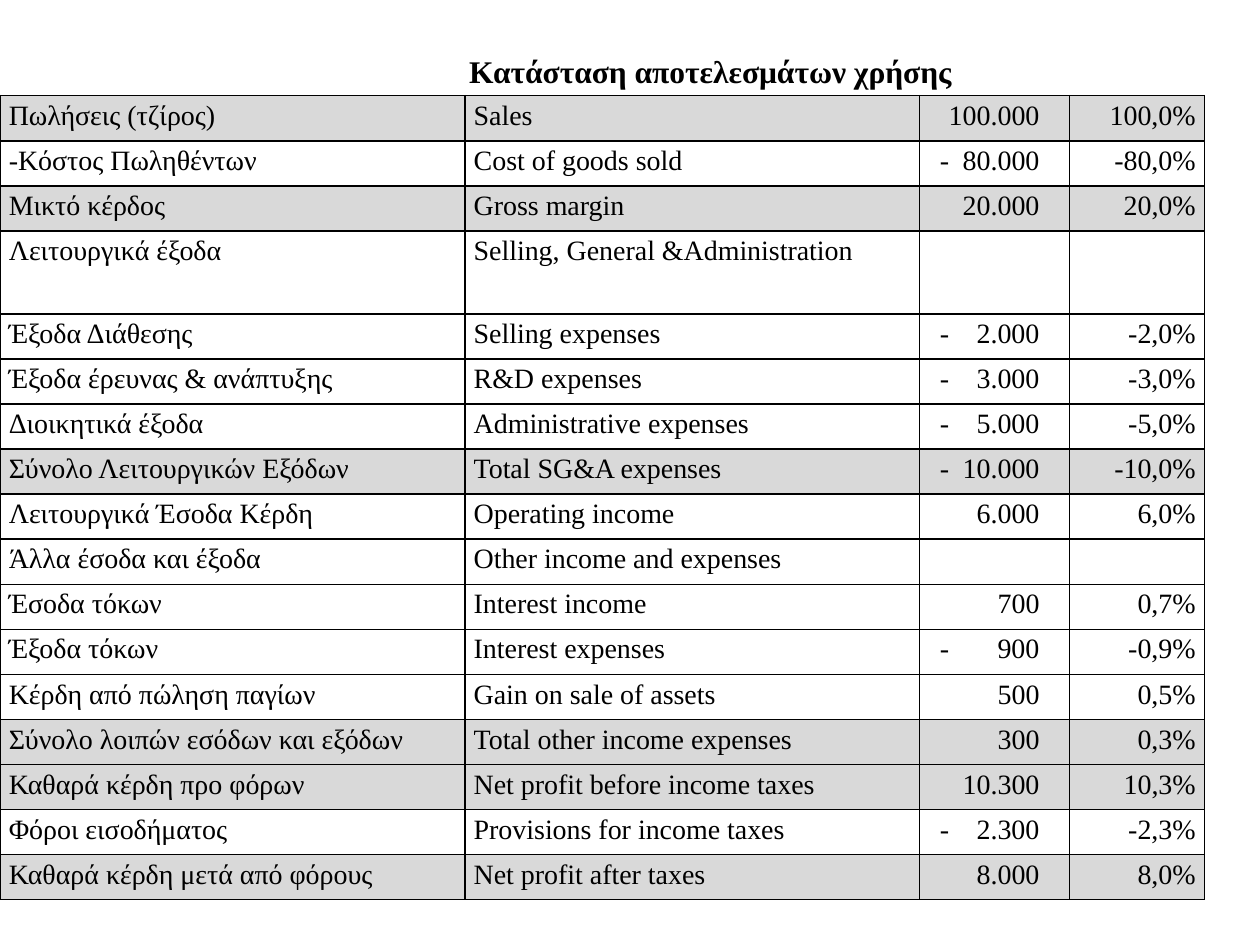
import pptx
import pptx.util
import pptx.dml.color
import pptx.enum.text
import pptx.oxml
import pptx.oxml.ns

Inches = pptx.util.Inches
Pt = pptx.util.Pt
Align = pptx.enum.text.PP_ALIGN

FONT = "Times New Roman"
COLORS = {"ink": "000000", "total": "D9D9D9"}
TITLE = "Κατάσταση αποτελεσμάτων χρήσης"
STATEMENT = [
    ("Πωλήσεις (τζίρος)", "Sales", "100.000", "100,0%"),
    ("-Κόστος Πωληθέντων", "Cost of goods sold", "-80.000", "-80,0%"),
    ("Μικτό κέρδος", "Gross margin", "20.000", "20,0%"),
    ("Λειτουργικά έξοδα", "Selling, General &Administration", "", ""),
    ("Έξοδα Διάθεσης", "Selling expenses", "-2.000", "-2,0%"),
    ("Έξοδα έρευνας & ανάπτυξης", "R&D expenses", "-3.000", "-3,0%"),
    ("Διοικητικά έξοδα", "Administrative expenses", "-5.000", "-5,0%"),
    ("Σύνολο Λειτουργικών Εξόδων", "Total SG&A expenses", "-10.000", "-10,0%"),
    ("Λειτουργικά Έσοδα Κέρδη", "Operating income", "6.000", "6,0%"),
    ("Άλλα έσοδα και έξοδα", "Other income and expenses", "", ""),
    ("Έσοδα τόκων", "Interest income", "700", "0,7%"),
    ("Έξοδα τόκων", "Interest expenses", "-900", "-0,9%"),
    ("Κέρδη από πώληση παγίων", "Gain on sale of assets", "500", "0,5%"),
    ("Σύνολο λοιπών εσόδων και εξόδων", "Total other income expenses", "300", "0,3%"),
    ("Καθαρά κέρδη προ φόρων", "Net profit before income taxes", "10.300", "10,3%"),
    ("Φόροι εισοδήματος", "Provisions for income taxes", "-2.300", "-2,3%"),
    ("Καθαρά κέρδη μετά από φόρους", "Net profit after taxes", "8.000", "8,0%"),
]
SHADED_ROWS = {0, 2, 7, 13, 14, 16}
TALL_ROW = 3
TALL_HEIGHT = 0.66
TABLE_HEIGHT = 6.38
COLUMN_WIDTHS = [3.69, 3.61, 1.19, 1.07]
AMOUNT_COLUMN = 2
PADDING = 0.07
SIGN_INSET = 0.16
AMOUNT_INSET = 0.24


def set_font(para, size, bold=False):
    para.font.name = FONT
    para.font.size = Pt(size)
    para.font.bold = bold
    para.font.color.rgb = pptx.dml.color.RGBColor.from_string(COLORS["ink"])


def add_borders(cell):
    properties = cell._tc.get_or_add_tcPr()
    for side in ("lnL", "lnR", "lnT", "lnB"):
        properties.append(pptx.oxml.parse_xml(
            f'<a:{side} {pptx.oxml.ns.nsdecls("a")} w="{Pt(1)}"><a:solidFill>'
            f'<a:srgbClr val="{COLORS["ink"]}"/></a:solidFill></a:{side}>'))


def add_right_tab(para, position):
    para._p.get_or_add_pPr().append(pptx.oxml.parse_xml(
        f'<a:tabLst {pptx.oxml.ns.nsdecls("a")}>'
        f'<a:tab pos="{Inches(position)}" algn="r"/></a:tabLst>'))


def fill_cell(cell, text, column, shaded):
    add_borders(cell)
    if shaded:
        cell.fill.solid()
        cell.fill.fore_color.rgb = pptx.dml.color.RGBColor.from_string(COLORS["total"])
    else:
        cell.fill.background()
    cell.margin_left = cell.margin_right = Inches(PADDING)
    cell.margin_top = cell.margin_bottom = 0
    para = cell.text_frame.paragraphs[0]
    para.line_spacing = 1.15
    if column < AMOUNT_COLUMN:
        para.alignment = Align.JUSTIFY
        para.space_before = para.space_after = Pt(1)
    elif column == AMOUNT_COLUMN and text.startswith("-"):
        para.alignment = Align.LEFT
        cell.margin_left = Inches(SIGN_INSET)
        add_right_tab(para, COLUMN_WIDTHS[column] - AMOUNT_INSET - SIGN_INSET)
        text = text.replace("-", "-\t")
    else:
        para.alignment = Align.RIGHT
        if column == AMOUNT_COLUMN:
            cell.margin_right = Inches(AMOUNT_INSET)
    if text:
        para.add_run().text = text
    set_font(para, 16)


def add_statement(slide):
    frame = slide.shapes.add_table(
        len(STATEMENT), len(COLUMN_WIDTHS), 0, Inches(0.76),
        Inches(sum(COLUMN_WIDTHS)), Inches(TABLE_HEIGHT))
    table = frame.table
    for column, width in zip(table.columns, COLUMN_WIDTHS):
        column.width = Inches(width)
    row_height = (TABLE_HEIGHT - TALL_HEIGHT) / (len(STATEMENT) - 1)
    for index, entry in enumerate(STATEMENT):
        table.rows[index].height = Inches(TALL_HEIGHT if index == TALL_ROW else row_height)
        for column, text in enumerate(entry):
            fill_cell(table.cell(index, column), text, column, index in SHADED_ROWS)


def add_title(slide):
    box = slide.shapes.add_textbox(0, Inches(0.25), Inches(8.94), Inches(0.75))
    frame = box.text_frame
    frame.word_wrap = True
    frame.vertical_anchor = pptx.enum.text.MSO_ANCHOR.TOP
    frame.margin_left, frame.margin_right = Inches(2.5), Inches(0.16)
    frame.margin_top, frame.margin_bottom = Inches(0.16), 0
    para = frame.paragraphs[0]
    para.alignment = Align.CENTER
    para.add_run().text = TITLE
    set_font(para, 18, bold=True)


def main():
    deck = pptx.Presentation()
    deck.slide_width, deck.slide_height = Inches(10), Inches(7.5)
    slide = deck.slides.add_slide(deck.slide_layouts[6])
    add_statement(slide)
    add_title(slide)
    deck.save("out.pptx")


if __name__ == "__main__":
    main()
